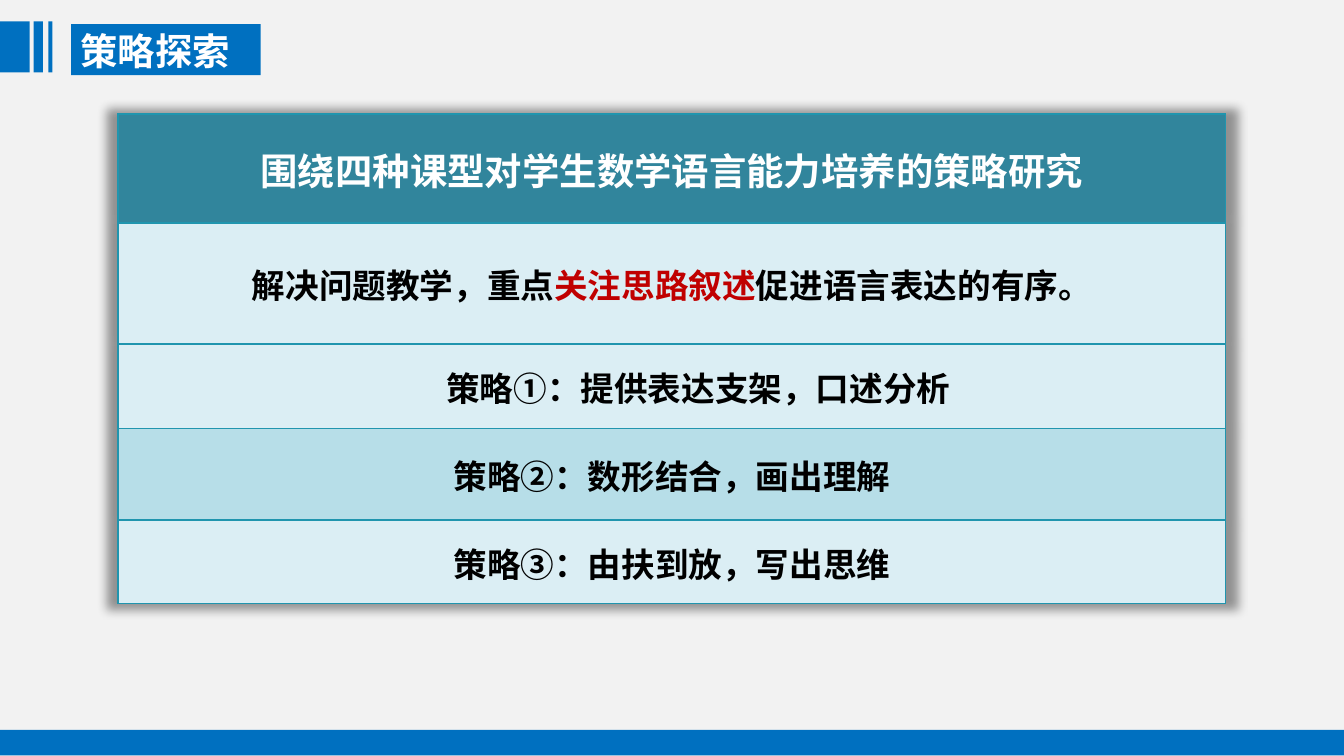
import pptx
import pptx.util
import pptx.dml.color
import pptx.enum.shapes
import pptx.enum.text
import pptx.oxml
import pptx.oxml.ns

Inches, Pt = pptx.util.Inches, pptx.util.Pt
RGBColor = pptx.dml.color.RGBColor
BACK = RGBColor(0xF2, 0xF2, 0xF2)
BLUE = RGBColor(0x00, 0x70, 0xC0)
WHITE = RGBColor(0xFF, 0xFF, 0xFF)
BLACK = RGBColor(0x00, 0x00, 0x00)
RED = RGBColor(0xC0, 0x00, 0x00)
TEAL = RGBColor(0x31, 0x85, 0x9C)
PALE = RGBColor(0xDB, 0xEE, 0xF4)
SKY = RGBColor(0xB7, 0xDE, 0xE8)
EDGE = RGBColor(0x20, 0x95, 0xAE)
LATIN, HAN = "Arial", "Noto Sans CJK SC"

ROWS = [
    (0.81, TEAL, 20, [("围绕四种课型对学生数学语言能力培养的策略研究", LATIN, WHITE)]),
    (0.9, PALE, 18, [("解决问题教学，重点", LATIN, BLACK),
                     ("关注思路叙述", LATIN, RED),
                     ("促进语言表达的有序。", LATIN, BLACK)]),
    (0.63, PALE, 18, [("策略", LATIN, BLACK), ("①：提供表达支架，口述分析", HAN, BLACK)]),
    (0.68, SKY, 18, [("策略", LATIN, BLACK), ("②：数形结合，画出理解", HAN, BLACK)]),
    (0.62, PALE, 18, [("策略", LATIN, BLACK), ("③：由扶到放，写出思维", HAN, BLACK)]),
]


def make(tag, body=""):
    """Build a drawing element from its tag and inner XML."""
    space = pptx.oxml.ns.nsdecls("a")
    name = tag.split()[0]
    return pptx.oxml.parse_xml(f"<a:{tag} {space}>{body}</a:{name}>")


def style(run, size, font, color):
    """Format a bold run, with the Chinese font for its East Asian text."""
    run.font.size = Pt(size)
    run.font.bold = True
    run.font.name = font
    run.font.color.rgb = color
    run.font._element.find(pptx.oxml.ns.qn("a:latin")).addnext(
        make(f'ea typeface="{HAN}"'))


def add_bar(slide, left, top, width, height):
    """Add a plain blue bar."""
    bar = slide.shapes.add_shape(
        pptx.enum.shapes.MSO_SHAPE.RECTANGLE,
        Inches(left), Inches(top), Inches(width), Inches(height))
    bar.shadow.inherit = False
    bar.fill.solid()
    bar.fill.fore_color.rgb = BLUE
    bar.line.fill.background()


def add_header(slide, left, top, height):
    """Add the title on its blue tag, with the stripes to its left."""
    add_bar(slide, left + 0.53, top + 0.02, 1.41, height)
    box = slide.shapes.add_textbox(
        Inches(left + 0.53), Inches(top + 0.01), Inches(1.6), Inches(0.41))
    frame = box.text_frame
    frame.word_wrap = True
    frame.margin_left = frame.margin_right = Inches(0.07)
    frame.margin_top = frame.margin_bottom = Inches(0.04)
    frame.text = "策略探索"
    style(frame.paragraphs[0].runs[0], 20, HAN, WHITE)
    for shift, width in [(0, 0.22), (0.25, 0.07), (0.36, 0.03)]:
        add_bar(slide, left + shift, top, width, height)


def fill_cell(cell, fill, size, parts):
    """Fill one cell with its colour, border and centred runs."""
    cell.fill.solid()
    cell.fill.fore_color.rgb = fill
    cell.vertical_anchor = pptx.enum.text.MSO_ANCHOR.MIDDLE
    cell.margin_left = cell.margin_right = cell.margin_top = Inches(0.01)
    cell.margin_bottom = 0
    para = cell.text_frame.paragraphs[0]
    para.alignment = pptx.enum.text.PP_ALIGN.CENTER
    for text, font, color in parts:
        run = para.add_run()
        run.text = text
        style(run, size, font, color)
    props = cell._tc.get_or_add_tcPr()
    for index, side in enumerate("LRTB"):
        props.insert(index, make(
            f'ln{side} w="12700"',
            f'<a:solidFill><a:srgbClr val="{EDGE}"/></a:solidFill>'))


def add_grid(slide, left, top, width):
    """Add the one-column strategy table with a soft shadow."""
    total = sum(row[0] for row in ROWS)
    table = slide.shapes.add_table(
        len(ROWS), 1, Inches(left), Inches(top), Inches(width), Inches(total)).table
    table._tbl.tblPr.insert(0, make(
        "effectLst",
        '<a:outerShdw blurRad="63500" sx="102000" sy="102000" algn="ctr" rotWithShape="0">'
        '<a:srgbClr val="000000"><a:alpha val="40000"/></a:srgbClr></a:outerShdw>'))
    for index, (height, fill, size, parts) in enumerate(ROWS):
        table.rows[index].height = Inches(height)
        fill_cell(table.cell(index, 0), fill, size, parts)
    table.cell(2, 0).margin_left = Inches(0.4)


def main():
    """Build and save the slide."""
    deck = pptx.Presentation()
    deck.slide_width = Inches(10)
    deck.slide_height = deck.slide_width * 9 // 16
    slide = deck.slides.add_slide(deck.slide_layouts[6])
    slide.background.fill.solid()
    slide.background.fill.fore_color.rgb = BACK
    add_header(slide, 0, 0.16, 0.38)
    add_bar(slide, 0, 5.43, 10, 0.19)
    add_grid(slide, 0.88, 0.85, 8.24)
    deck.save("out.pptx")


if __name__ == "__main__":
    main()
